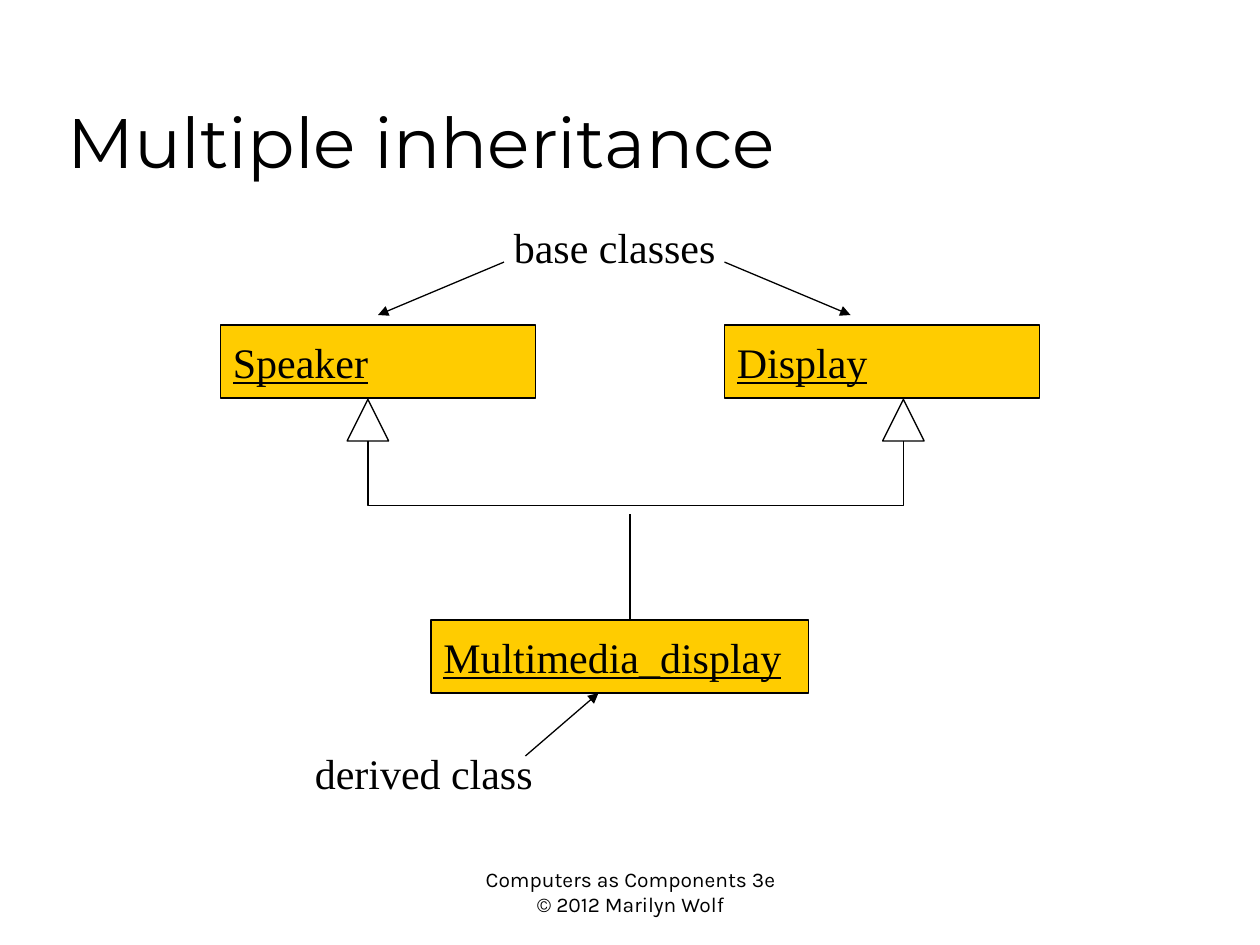
"""Draw a class diagram of multiple inheritance."""
import dataclasses

import lxml.etree
import pptx
import pptx.dml.color
import pptx.enum.shapes
import pptx.enum.text
import pptx.oxml.ns
import pptx.util

Inches = pptx.util.Inches
Kind = pptx.enum.shapes.MSO_SHAPE
Align = pptx.enum.text.PP_ALIGN
Anchor = pptx.enum.text.MSO_ANCHOR
qn = pptx.oxml.ns.qn


@dataclasses.dataclass(frozen=True)
class Style:
    font: str
    size: int


@dataclasses.dataclass(frozen=True)
class Theme:
    ink: str = "000000"
    gold: str = "FFCC00"
    white: str = "FFFFFF"
    stroke: float = 0.75
    title: Style = Style("Montserrat", 40)
    body: Style = Style("Times New Roman", 24)
    foot: Style = Style("Karla", 12)


@dataclasses.dataclass(frozen=True)
class Label:
    text: str
    left: float
    top: float
    width: float
    height: float
    style: Style
    align: Align = Align.LEFT
    anchor: Anchor = Anchor.TOP
    wrap: bool = True


@dataclasses.dataclass(frozen=True)
class Box:
    text: str
    left: float
    top: float
    width: float


@dataclasses.dataclass(frozen=True)
class Line:
    start: tuple[float, float]
    end: tuple[float, float]
    arrow: bool = True


THEME = Theme()
BOX_HEIGHT = 0.58
TIP = 0.33
TIP_TOP = 3.17
BAR = 4.01
TIPS = (2.92, 7.17)
LABELS = (
    Label("Computers as Components 3e\n© 2012 Marilyn Wolf", 3.67, 6.83, 2.67, 0.5,
          THEME.foot, align=Align.CENTER),
    Label("Multiple inheritance", 0.44, 0.25, 8.5, 1.25, THEME.title,
          anchor=Anchor.BOTTOM),
    Label("base classes", 3.98, 1.71, 1.8, 0.5, THEME.body, wrap=False),
    Label("derived class", 2.4, 5.88, 1.93, 0.5, THEME.body, wrap=False),
)
BOXES = (
    Box("Speaker", 1.75, 2.58, 2.5),
    Box("Display", 5.75, 2.58, 2.5),
    Box("Multimedia_display", 3.42, 4.92, 3),
)
LINES = (
    Line((5, 4.08), (5, 4.92), arrow=False),
    Line((4, 2.08), (3, 2.5)),
    Line((5.75, 2.08), (6.75, 2.5)),
    Line((4.17, 6), (4.75, 5.5)),
)


def tint(code: str) -> pptx.dml.color.RGBColor:
    return pptx.dml.color.RGBColor.from_string(code)


def write(frame, text: str, style: Style, align: Align = Align.LEFT,
          under: bool = False) -> None:
    frame.text = text
    for para in frame.paragraphs:
        para.alignment = align
        for run in para.runs:
            run.font.name = style.font
            run.font.size = pptx.util.Pt(style.size)
            run.font.color.rgb = tint(THEME.ink)
            run.font.underline = under or None


def ink(shape) -> None:
    shape.line.color.rgb = tint(THEME.ink)
    shape.line.width = pptx.util.Pt(THEME.stroke)


def paint(shape, fill: str) -> None:
    shape.shadow.inherit = False
    shape.fill.solid()
    shape.fill.fore_color.rgb = tint(fill)
    ink(shape)


def draw_label(shapes, label: Label) -> None:
    text = shapes.add_textbox(Inches(label.left), Inches(label.top),
                              Inches(label.width), Inches(label.height))
    frame = text.text_frame
    frame.word_wrap = label.wrap
    frame.vertical_anchor = label.anchor
    write(frame, label.text, label.style, label.align)


def draw_box(shapes, box: Box) -> None:
    shape = shapes.add_shape(Kind.RECTANGLE, Inches(box.left), Inches(box.top),
                             Inches(box.width), Inches(BOX_HEIGHT))
    paint(shape, THEME.gold)
    shape.text_frame.word_wrap = True
    shape.text_frame.vertical_anchor = Anchor.MIDDLE
    write(shape.text_frame, box.text, THEME.body, under=True)


def draw_tip(shapes, x: float) -> None:
    shape = shapes.add_shape(Kind.ISOSCELES_TRIANGLE, Inches(x - TIP / 2),
                             Inches(TIP_TOP), Inches(TIP), Inches(TIP))
    paint(shape, THEME.white)


def draw_fork(shapes) -> None:
    left, right = (Inches(x) for x in TIPS)
    base, bar = Inches(TIP_TOP + TIP), Inches(BAR)
    path = shapes.build_freeform(left, base)
    path.add_line_segments([(left, bar), (right, bar), (right, base)], close=False)
    shape = path.convert_to_shape()
    shape.shadow.inherit = False
    shape.fill.background()
    ink(shape)


def draw_line(shapes, line: Line) -> None:
    ends = [Inches(value) for value in line.start + line.end]
    link = shapes.add_connector(pptx.enum.shapes.MSO_CONNECTOR.STRAIGHT, *ends)
    ink(link)
    props = link.element.spPr
    if line.arrow:
        lxml.etree.SubElement(props.find(qn("a:ln")), qn("a:tailEnd"), type="triangle")
    lxml.etree.SubElement(props, qn("a:effectLst"))


def main() -> None:
    deck = pptx.Presentation()
    deck.slide_width, deck.slide_height = Inches(10), Inches(7.5)
    shapes = deck.slides.add_slide(deck.slide_layouts[6]).shapes
    for label in LABELS:
        draw_label(shapes, label)
    for box in BOXES:
        draw_box(shapes, box)
    for x in TIPS:
        draw_tip(shapes, x)
    draw_fork(shapes)
    for line in LINES:
        draw_line(shapes, line)
    deck.save("out.pptx")


if __name__ == "__main__":
    main()
